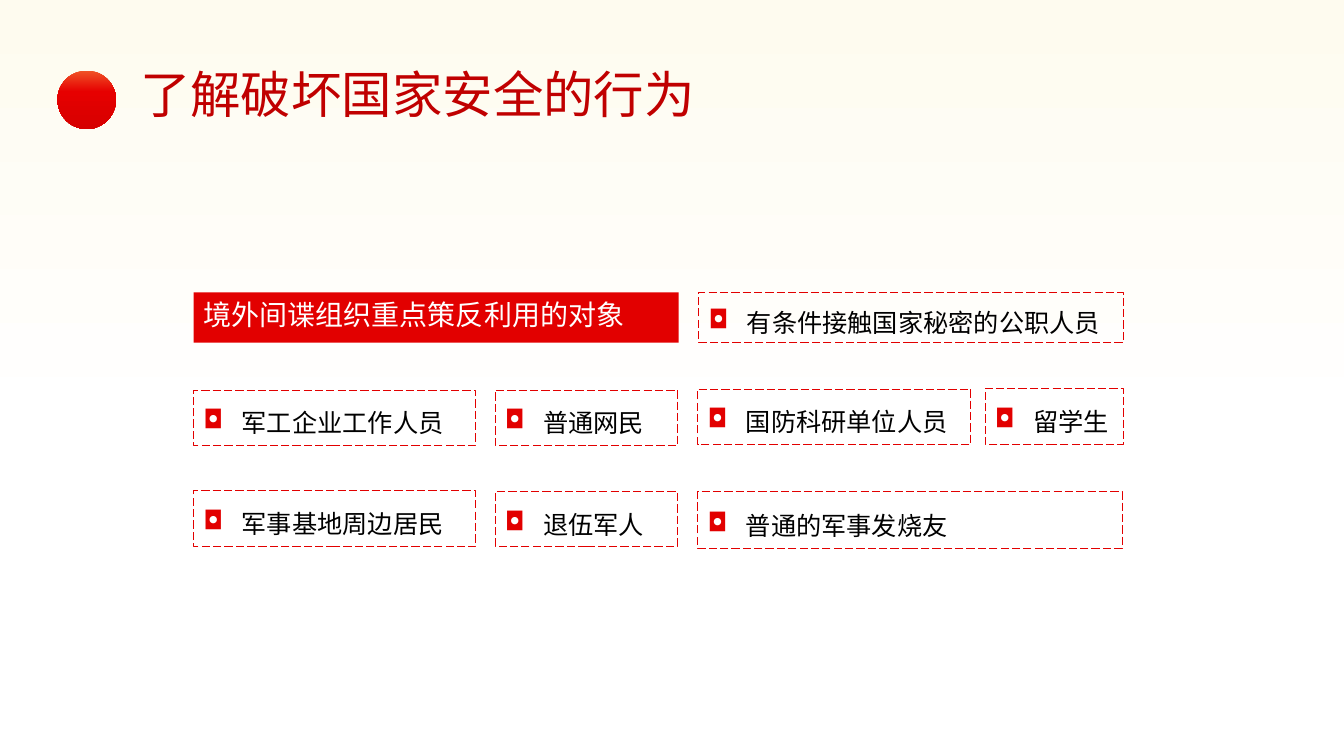
from copy import deepcopy

from lxml import etree
from pptx import Presentation
from pptx.dml.color import RGBColor
from pptx.enum.dml import MSO_LINE
from pptx.enum.lang import MSO_LANGUAGE_ID as LANG
from pptx.enum.shapes import MSO_SHAPE as SHAPE
from pptx.enum.text import MSO_ANCHOR as ANCHOR, MSO_AUTO_SIZE as AUTO, PP_ALIGN as ALIGN
from pptx.oxml.ns import qn
from pptx.util import Inches, Pt

COLORS = {"title": "C00000", "red": "E20000", "white": "FFFFFF", "black": "000000",
          "cream": "FEFBEF", "glow": "F05327", "bright": "E60000", "deep": "D60000"}
CJK = "Noto Sans CJK SC"
FORMATS = {
    "title": {"size": Pt(36), "name": CJK, "color": "title"},
    "header": {"size": Pt(20), "name": CJK, "color": "white"},
    "item": {"size": Pt(18), "name": "Arial", "color": "black"},
}
ITEMS = [
    ("有条件接触国家秘密的公职人员", 6.93, 2.9, 4.21, 0.5),
    ("军工企业工作人员", 1.92, 3.87, 2.8, 0.55),
    ("普通网民", 4.91, 3.87, 1.81, 0.55),
    ("国防科研单位人员", 6.92, 3.86, 2.71, 0.55),
    ("留学生", 9.77, 3.85, 1.37, 0.56),
    ("军事基地周边居民", 1.92, 4.87, 2.8, 0.55),
    ("退伍军人", 4.91, 4.88, 1.81, 0.54),
    ("普通的军事发烧友", 6.92, 4.88, 4.21, 0.56),
]


def rgb(name):
    return RGBColor.from_string(COLORS[name])


class Deck:
    def __init__(self):
        self.prs = Presentation()
        self.prs.slide_width, self.prs.slide_height = Inches(13.33), Inches(7.5)
        self.s = self.prs.slides.add_slide(self.prs.slide_layouts[5])

    def gradient(self, fill, host, stops):
        fill.gradient()
        fill.gradient_angle = 270
        gs_list = host.xpath(".//a:gsLst")[0]
        for _ in stops[2:]:
            gs_list.append(deepcopy(gs_list[0]))
        for stop, (position, color) in zip(fill.gradient_stops, stops):
            stop.position = position
            stop.color.rgb = rgb(color)

    def background(self, stops):
        self.gradient(self.s.background.fill, self.s.element, stops)

    def shape(self, kind, x, y, w, h):
        sp = self.s.shapes.add_shape(kind, Inches(x), Inches(y), Inches(w), Inches(h))
        sp.shadow.inherit = False
        sp.line.fill.background()
        return sp

    def text(self, tf, words, style, **frame):
        frame = {"word_wrap": True, "auto_size": AUTO.NONE,
                 "vertical_anchor": ANCHOR.MIDDLE, **frame}
        for key, value in frame.items():
            setattr(tf, key, value)
        p = tf.paragraphs[0]
        r = p.add_run()
        r.text = words
        for key, value in FORMATS[style].items():
            if key == "color":
                r.font.color.rgb = rgb(value)
            else:
                setattr(r.font, key, value)
        r.font.language_id = LANG.SIMPLIFIED_CHINESE
        latin = r._r.xpath(".//a:latin")[0]
        latin.addnext(etree.Element(qn("a:ea"), typeface=CJK))
        return p

    def title(self, words, x, y, w, h):
        sp = self.s.shapes.title
        sp.left, sp.top, sp.width, sp.height = map(Inches, (x, y, w, h))
        self.text(sp.text_frame, words, "title").alignment = ALIGN.JUSTIFY

    def ball(self, x, y, w, h, stops):
        sp = self.shape(SHAPE.OVAL, x, y, w, h)
        self.gradient(sp.fill, sp.element, stops)

    def header(self, words, x, y, w, h):
        sp = self.shape(SHAPE.RECTANGLE, x, y, w, h)
        sp.fill.solid()
        sp.fill.fore_color.rgb = rgb("red")
        p = self.text(sp.text_frame, words, "header", margin_bottom=Inches(0.12))
        p.alignment = ALIGN.JUSTIFY

    def item(self, words, x, y, w, h):
        sp = self.shape(SHAPE.RECTANGLE, x, y, w, h)
        sp.fill.background()
        sp.line.color.rgb = rgb("red")
        sp.line.width = Pt(0.75)
        sp.line.dash_style = MSO_LINE.LONG_DASH
        p = self.text(sp.text_frame, words, "item",
                      margin_top=Inches(0.08), margin_bottom=Inches(0.28))
        pPr = p._p.get_or_add_pPr()
        pPr.set("marL", str(Inches(0.38)))
        pPr.set("indent", str(-Inches(0.38)))
        color = etree.SubElement(pPr, qn("a:buClr"))
        etree.SubElement(color, qn("a:srgbClr"), val=COLORS["red"])
        etree.SubElement(pPr, qn("a:buChar"), char="◘")
        for key, value in {"alignment": ALIGN.LEFT, "line_spacing": 2.0,
                           "space_after": Pt(6)}.items():
            setattr(p, key, value)


def main():
    deck = Deck()
    deck.background([(0, "cream"), (0.57, "white")])
    deck.title("了解破坏国家安全的行为", 1.29, 0.57, 6.13, 0.71)
    deck.ball(0.57, 0.7, 0.58, 0.58, [(0, "glow"), (0.36, "bright"), (1, "deep")])
    deck.header("境外间谍组织重点策反利用的对象", 1.92, 2.9, 4.81, 0.5)
    for item in ITEMS:
        deck.item(*item)
    deck.prs.save("out.pptx")


if __name__ == "__main__":
    main()
